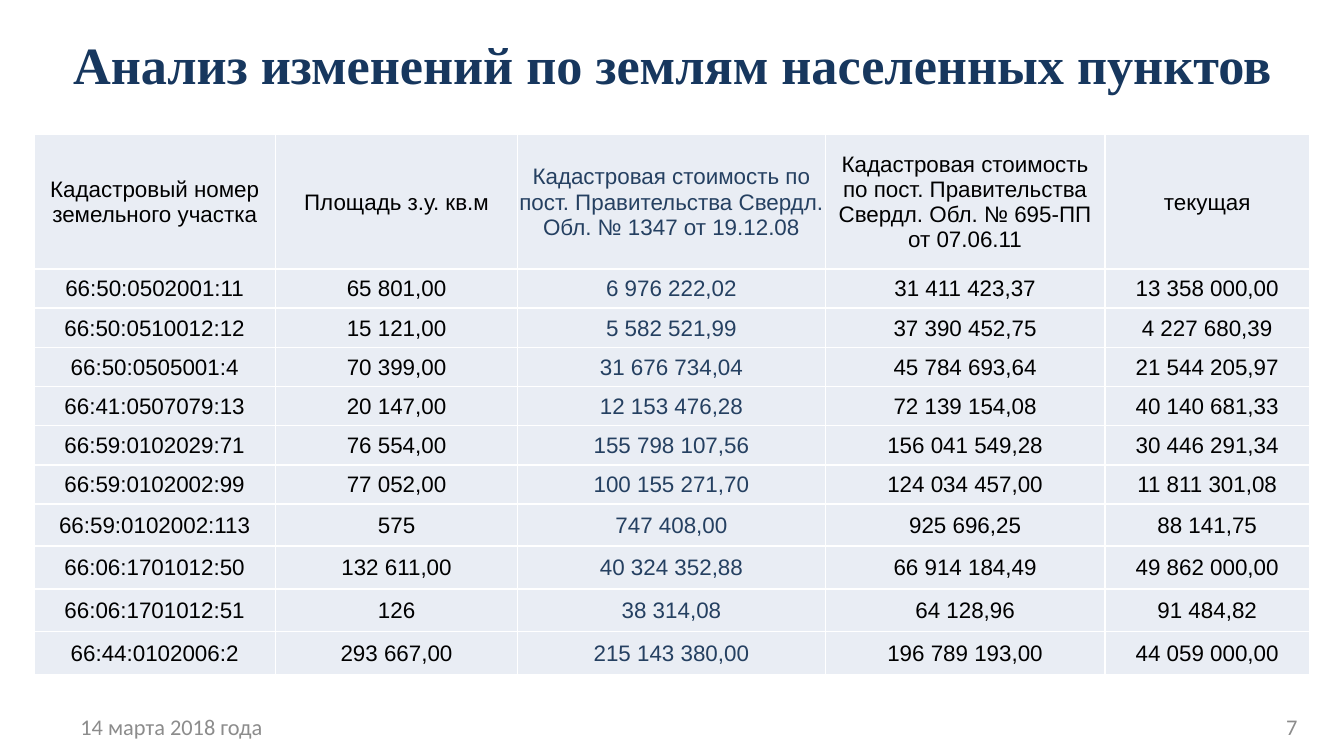
from lxml.etree import SubElement
from pptx import Presentation
from pptx.dml.color import RGBColor
from pptx.enum.text import MSO_ANCHOR, MSO_AUTO_SIZE, PP_ALIGN
from pptx.oxml.ns import qn
from pptx.util import Cm, Pt

NAVY = RGBColor(0x17, 0x37, 0x5E)
BLUE = RGBColor(0x25, 0x40, 0x61)
BLACK = RGBColor(0x00, 0x00, 0x00)
GRAY = RGBColor(0x8C, 0x8C, 0x8C)
PALE = RGBColor(0xE9, 0xED, 0xF4)
WHITE = RGBColor(0xFF, 0xFF, 0xFF)

HEADERS = (
    "Кадастровый номер земельного участка",
    "Площадь з.у. кв.м",
    "Кадастровая стоимость по пост. Правительства Свердл. Обл. № 1347 от 19.12.08",
    "Кадастровая стоимость по пост. Правительства Свердл. Обл. № 695-ПП от 07.06.11",
    "текущая",
)
PLOTS = [
    ("66:50:0502001:11", "65 801,00", "6 976 222,02", "31 411 423,37", "13 358 000,00"),
    ("66:50:0510012:12", "15 121,00", "5 582 521,99", "37 390 452,75", "4 227 680,39"),
    ("66:50:0505001:4", "70 399,00", "31 676 734,04", "45 784 693,64", "21 544 205,97"),
    ("66:41:0507079:13", "20 147,00", "12 153 476,28", "72 139 154,08", "40 140 681,33"),
    ("66:59:0102029:71", "76 554,00", "155 798 107,56", "156 041 549,28", "30 446 291,34"),
    ("66:59:0102002:99", "77 052,00", "100 155 271,70", "124 034 457,00", "11 811 301,08"),
    ("66:59:0102002:113", "575", "747 408,00", "925 696,25", "88 141,75"),
    ("66:06:1701012:50", "132 611,00", "40 324 352,88", "66 914 184,49", "49 862 000,00"),
    ("66:06:1701012:51", "126", "38 314,08", "64 128,96", "91 484,82"),
    ("66:44:0102006:2", "293 667,00", "215 143 380,00", "196 789 193,00", "44 059 000,00"),
]
COLUMN_WIDTHS = (4.57, 4.57, 5.82, 5.28, 3.87)
ROW_HEIGHTS = [2.54] + [0.74] * 6 + [0.79] + [0.81] * 3
OLD_VALUE_COLUMN = 2


def write(frame, text, font_name, size, color, align):
    frame.vertical_anchor = MSO_ANCHOR.MIDDLE
    paragraph = frame.paragraphs[0]
    paragraph.alignment = align
    run = paragraph.add_run()
    run.text = text
    run.font.name = font_name
    run.font.size = Pt(size)
    run.font.color.rgb = color
    return run


def add_borders(cell, color):
    properties = cell._tc.get_or_add_tcPr()
    for side in ("a:lnL", "a:lnR", "a:lnT", "a:lnB"):
        line = SubElement(properties, qn(side), w=str(Pt(1)))
        solid = SubElement(line, qn("a:solidFill"))
        SubElement(solid, qn("a:srgbClr"), val=str(color))


prs = Presentation()
prs.slide_width, prs.slide_height = Cm(25.4), Cm(14.28)
slide = prs.slides.add_slide(prs.slide_layouts[5])

# Title
heading = slide.shapes.title
heading.left, heading.top = Cm(0.64), Cm(0.38)
heading.width, heading.height = Cm(24.13), Cm(1.65)
heading.text_frame.auto_size = MSO_AUTO_SIZE.NONE
heading_run = write(heading.text_frame, "Анализ изменений по землям населенных пунктов",
                    "Times New Roman", 28, NAVY, PP_ALIGN.CENTER)
heading_run.font.bold = True

# Land plots and their cadastral values
plots = slide.shapes.add_table(len(PLOTS) + 1, len(HEADERS), Cm(0.64), Cm(2.54),
                               Cm(sum(COLUMN_WIDTHS)), Cm(sum(ROW_HEIGHTS))).table
plots.horz_banding = False
for column, width in zip(plots.columns, COLUMN_WIDTHS):
    column.width = Cm(width)
for row, height in zip(plots.rows, ROW_HEIGHTS):
    row.height = Cm(height)

for r, values in enumerate([HEADERS] + PLOTS):
    for c, value in enumerate(values):
        cell = plots.cell(r, c)
        add_borders(cell, WHITE)
        cell.fill.solid()
        cell.fill.fore_color.rgb = PALE
        cell.margin_left = cell.margin_right = cell.margin_top = Cm(0.02)
        cell.margin_bottom = 0
        cell.vertical_anchor = MSO_ANCHOR.MIDDLE
        color = BLUE if c == OLD_VALUE_COLUMN else BLACK
        value_run = write(cell.text_frame, value, "Arial", 12, color, PP_ALIGN.CENTER)
        value_run.font.bold = False

# Date and page number
for text, left, width, align in (
    ("14 марта 2018 года", 1.27, 4.83, PP_ALIGN.LEFT),
    ("7", 22.1, 2.67, PP_ALIGN.RIGHT),
):
    footer = slide.shapes.add_textbox(Cm(left), Cm(13.44), Cm(width), Cm(0.56))
    footer.text_frame.word_wrap = True
    write(footer.text_frame, text, "Calibri", 12, GRAY, align)

prs.save("out.pptx")
